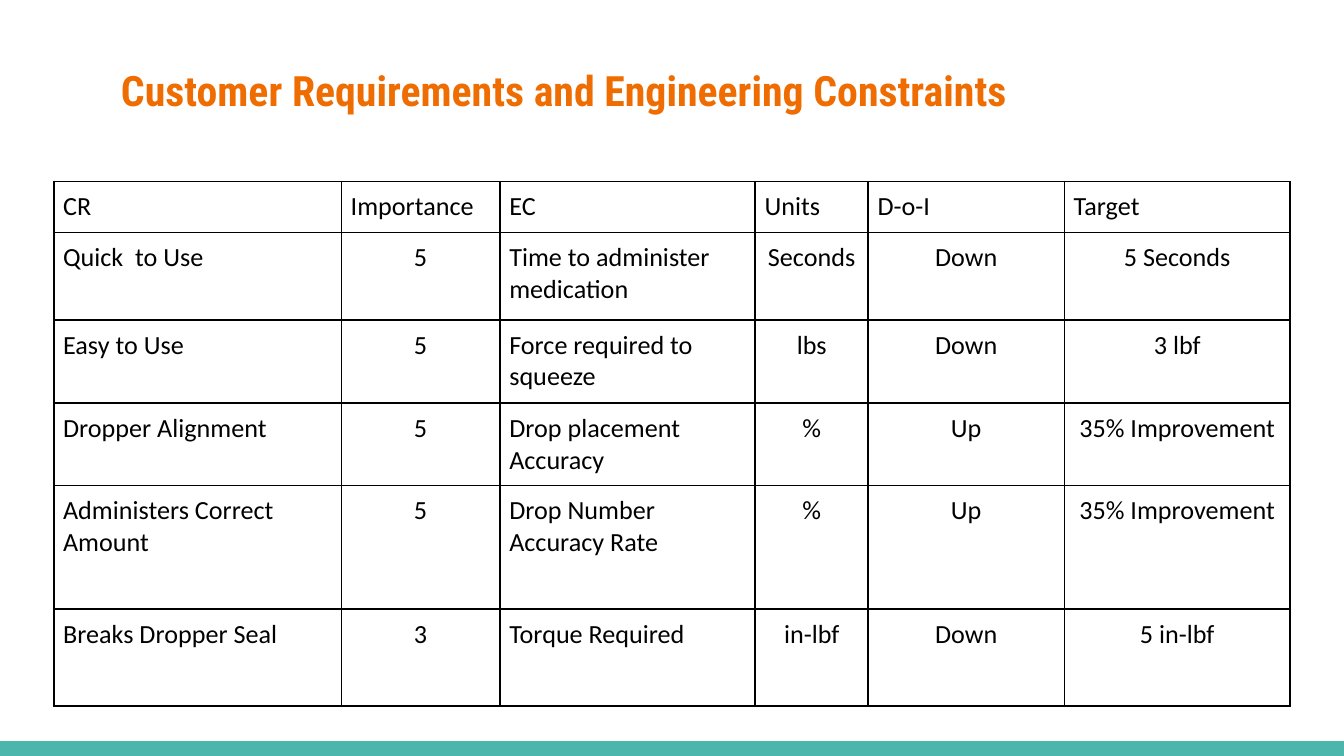
from dataclasses import dataclass

from lxml.etree import SubElement
from pptx import Presentation
from pptx.dml.color import RGBColor
from pptx.enum.shapes import MSO_SHAPE
from pptx.enum.text import MSO_ANCHOR, PP_ALIGN
from pptx.oxml.ns import qn
from pptx.util import Inches, Pt

TITLE = "Customer Requirements and Engineering Constraints"
HEADER = ("CR", "Importance", "EC", "Units", "D-o-I", "Target")
REQUIREMENTS = [
    ("Quick  to Use", "5", "Time to administer medication", "Seconds", "Down", "5 Seconds"),
    ("Easy to Use", "5", "Force required to squeeze", "lbs", "Down", "3 lbf"),
    ("Dropper Alignment", "5", "Drop placement Accuracy", "%", "Up", "35% Improvement"),
    ("Administers Correct Amount", "5", "Drop Number Accuracy Rate", "%", "Up", "35% Improvement"),
    ("Breaks Dropper Seal", "3", "Torque Required", "in-lbf", "Down", "5 in-lbf"),
]
LEFT_ALIGNED = {"CR", "EC"}

SLIDE_WIDTH = 10
SLIDE_HEIGHT = SLIDE_WIDTH * 9 / 16
BAR_HEIGHT = 0.11
TITLE_BOX = (0.8, 0.38, 8.41, 0.59)
TABLE_LEFT, TABLE_TOP = 0.4, 1.35
COLUMN_WIDTHS = (2.14, 1.18, 1.9, 0.84, 1.46, 1.68)
ROW_HEIGHTS = (0.38, 0.65, 0.62, 0.61, 0.92, 0.72)


@dataclass(frozen=True)
class Theme:
    title_font: str = "Roboto Condensed"
    title_size: float = 22.4
    title_color: str = "EF6C00"
    body_font: str = "Calibri"
    body_size: float = 14
    ink: str = "000000"
    bar: str = "4DB6AC"
    title_inset: float = 0.1
    cell_inset: float = 0.07
    border: float = 1


THEME = Theme()


def style_font(font, name, size, color, bold=False):
    font.name, font.size, font.bold = name, Pt(size), bold
    font.color.rgb = RGBColor.from_string(color)


def set_insets(frame, inset):
    frame.margin_left = frame.margin_right = Inches(inset)
    frame.margin_top = frame.margin_bottom = Inches(inset)


def add_borders(cell):
    properties = cell._tc.get_or_add_tcPr()
    for index, side in enumerate(("lnL", "lnR", "lnT", "lnB")):
        line = properties.makeelement(qn(f"a:{side}"), {"w": str(Pt(THEME.border))})
        fill = SubElement(line, qn("a:solidFill"))
        SubElement(fill, qn("a:srgbClr"), val=THEME.ink)
        properties.insert(index, line)  # borders come before the cell fill


def add_bar(slide):
    bar = slide.shapes.add_shape(
        MSO_SHAPE.RECTANGLE, 0, Inches(SLIDE_HEIGHT - BAR_HEIGHT),
        Inches(SLIDE_WIDTH), Inches(BAR_HEIGHT))
    bar.shadow.inherit = False
    bar.fill.solid()
    bar.fill.fore_color.rgb = RGBColor.from_string(THEME.bar)
    bar.line.fill.background()


def format_title(title):
    title.left, title.top, title.width, title.height = map(Inches, TITLE_BOX)
    frame = title.text_frame
    frame.text = TITLE
    frame.word_wrap = True
    frame.vertical_anchor = MSO_ANCHOR.TOP
    set_insets(frame, THEME.title_inset)
    paragraph = frame.paragraphs[0]
    paragraph.alignment = PP_ALIGN.LEFT
    style_font(paragraph.font, THEME.title_font, THEME.title_size, THEME.title_color, bold=True)


def fill_cell(cell, text, alignment):
    cell.text = text
    cell.fill.background()
    cell.vertical_anchor = MSO_ANCHOR.TOP
    set_insets(cell, THEME.cell_inset)
    paragraph = cell.text_frame.paragraphs[0]
    paragraph.alignment = alignment
    style_font(paragraph.font, THEME.body_font, THEME.body_size, THEME.ink)
    add_borders(cell)


def add_requirements_table(slide):
    rows = [HEADER, *REQUIREMENTS]
    table = slide.shapes.add_table(
        len(rows), len(HEADER), Inches(TABLE_LEFT), Inches(TABLE_TOP),
        Inches(sum(COLUMN_WIDTHS)), Inches(sum(ROW_HEIGHTS))).table
    table.first_row = table.horz_banding = False
    for column, width in zip(table.columns, COLUMN_WIDTHS):
        column.width = Inches(width)
    for row, height, texts in zip(table.rows, ROW_HEIGHTS, rows):
        row.height = Inches(height)
        for cell, heading, text in zip(row.cells, HEADER, texts):
            is_left = texts is HEADER or heading in LEFT_ALIGNED
            fill_cell(cell, text, PP_ALIGN.LEFT if is_left else PP_ALIGN.CENTER)


def main():
    presentation = Presentation()
    presentation.slide_width = Inches(SLIDE_WIDTH)
    presentation.slide_height = Inches(SLIDE_HEIGHT)
    slide = presentation.slides.add_slide(presentation.slide_layouts.get_by_name("Title Only"))
    add_bar(slide)
    format_title(slide.shapes.title)
    add_requirements_table(slide)
    presentation.save("out.pptx")


if __name__ == "__main__":
    main()
